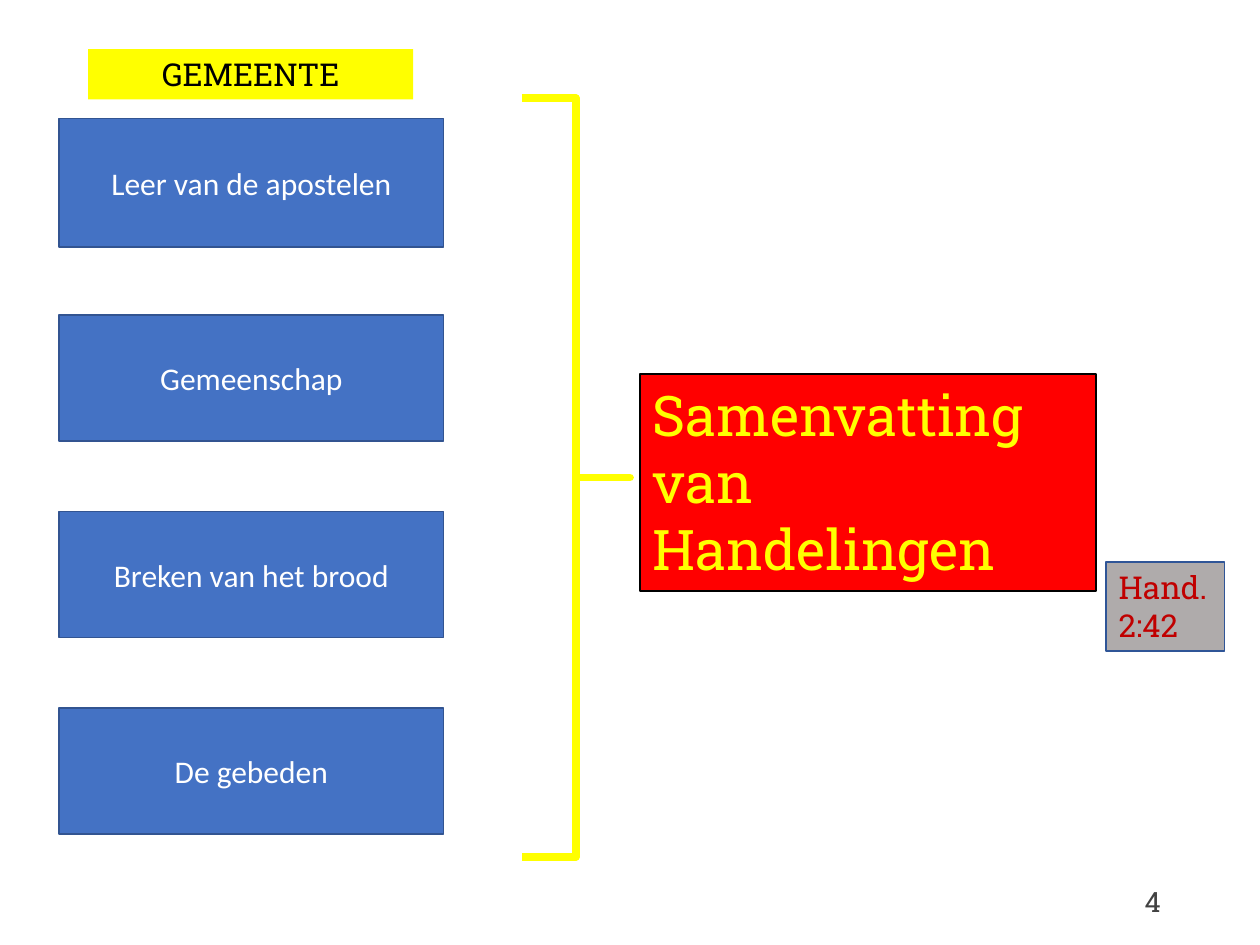
"""Builds the slide that sums up Acts with the four pillars of the congregation."""
from pptx import Presentation
from pptx.dml.color import RGBColor
from pptx.enum.shapes import MSO_SHAPE as Shape
from pptx.enum.text import MSO_ANCHOR as Anchor, PP_ALIGN as Align
from pptx.util import Inches, Pt

COLORS = {
    "blue": "4472C4", "blue_edge": "325491", "navy": "2F5597", "yellow": "FFFF00",
    "red": "FF0000", "gray": "AFABAB", "dark_red": "C00000", "black": "000000",
    "white": "FFFFFF", "number": "424242",
}


def add_block(page, kind, place, fill=None, line=None, width=1):
    block = page.shapes.add_shape(kind, *[Inches(value) for value in place])
    block.shadow.inherit = False
    if fill:
        block.fill.solid()
        block.fill.fore_color.rgb = RGBColor.from_string(COLORS[fill])
    else:
        block.fill.background()
    if line:
        block.line.color.rgb = RGBColor.from_string(COLORS[line])
        block.line.width = Pt(width)
    else:
        block.line.fill.background()
    return block


def write(box, text, color, size=18, font="Roboto Slab", align=Align.LEFT, anchor=Anchor.TOP):
    frame = box.text_frame
    frame.word_wrap = True
    frame.vertical_anchor = anchor
    para = frame.paragraphs[0]
    para.alignment = align
    span = para.add_run()
    span.text = text
    formats = {"name": font, "size": Pt(size)}
    for name, value in formats.items():
        setattr(span.font, name, value)
    span.font.color.rgb = RGBColor.from_string(COLORS[color])


deck = Presentation()
deck.slide_width = Inches(10)
deck.slide_height = Inches(7.5)
page = deck.slides.add_slide(deck.slide_layouts[6])

pillars = ["Leer van de apostelen", "Gemeenschap", "Breken van het brood", "De gebeden"]
for index, pillar in enumerate(pillars):
    height = 1.02 if index == 0 else 1
    place = (0.47, 0.94 + 1.56 * index, 3.05, height)
    box = add_block(page, Shape.RECTANGLE, place, "blue", "blue_edge")
    write(box, pillar, "white", font="Calibri", align=Align.CENTER, anchor=Anchor.MIDDLE)

heading = add_block(page, Shape.RECTANGLE, (0.7, 0.39, 2.58, 0.4), "yellow")
write(heading, "GEMEENTE", "black", align=Align.CENTER)

brace = add_block(page, Shape.RIGHT_BRACE, (4.14, 0.78, 0.86, 6.02), line="yellow", width=4.5)
brace.adjustments[0] = 0
brace.adjustments[1] = 0.5

summary = add_block(page, Shape.RECTANGLE, (5.08, 2.97, 3.62, 1.72), "red", "black")
write(summary, "Samenvatting van Handelingen", "yellow", size=32)

verse = add_block(page, Shape.RECTANGLE, (8.78, 4.46, 0.94, 0.71), "gray", "navy")
write(verse, "Hand. 2:42", "dark_red")

number = page.shapes.add_textbox(Inches(7.06), Inches(6.95), Inches(2.25), Inches(0.4))
write(number, "4", "number", size=16, align=Align.RIGHT, anchor=Anchor.MIDDLE)

deck.save("out.pptx")
